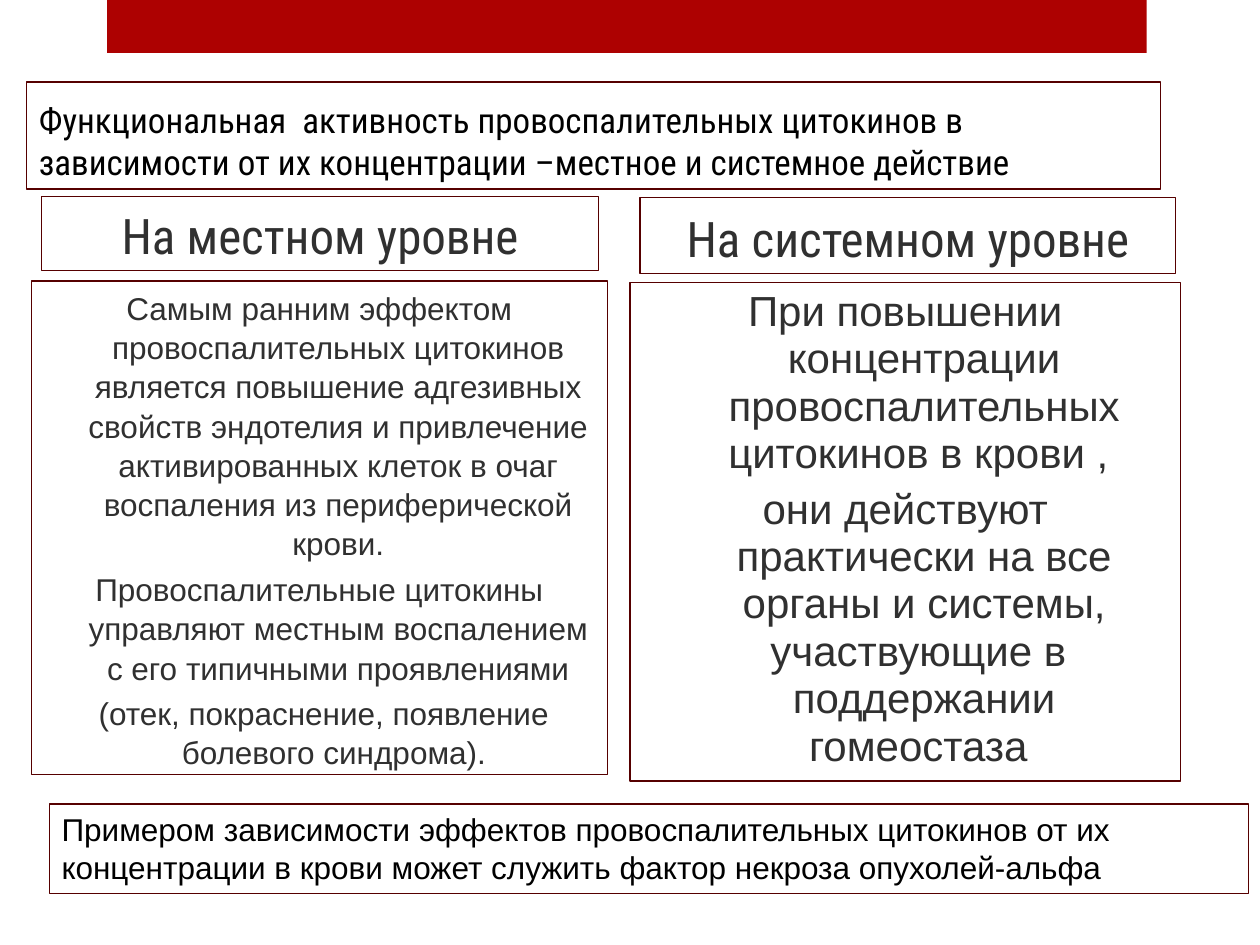
from pptx import Presentation
from pptx.dml.color import RGBColor
from pptx.enum.shapes import MSO_SHAPE
from pptx.enum.text import MSO_ANCHOR, PP_ALIGN
from pptx.util import Inches, Pt

COLORS = {"band": "AD0101", "border": "560000", "paper": "FFFFFF",
          "black": "000000", "gray": "303030"}
WIDTH, HEIGHT = 10, 7.5
HANGING = 0.3

# Text styles: font, size, color, alignment, anchor, hanging indent
STYLES = {
    "title": ("Roboto Condensed", 20, "black", PP_ALIGN.LEFT, MSO_ANCHOR.BOTTOM, False),
    "heading": ("Roboto Condensed", 28, "gray", PP_ALIGN.CENTER, MSO_ANCHOR.BOTTOM, False),
    "local": ("Arial", 18, "gray", PP_ALIGN.CENTER, MSO_ANCHOR.TOP, True),
    "systemic": ("Arial", 24, "gray", PP_ALIGN.CENTER, MSO_ANCHOR.TOP, True),
    "example": ("Arial", 18, "black", PP_ALIGN.LEFT, MSO_ANCHOR.TOP, False),
}
LINE_SPACING = {"local": 1.04, "systemic": 0.94}

# Content: style, (left, top, width, height) in inches, paragraphs
BOXES = [
    ("title", (0.21, 0.65, 9, 0.85), [
        "Функциональная  активность провоспалительных цитокинов в зависимости "
        "от их концентрации –местное и системное действие"]),
    ("heading", (0.33, 1.56, 4.42, 0.59), ["На местном уровне"]),
    ("local", (0.25, 2.23, 4.57, 3.92), [
        "Самым ранним эффектом провоспалительных цитокинов является повышение "
        "адгезивных свойств эндотелия и привлечение активированных клеток в очаг "
        "воспаления из периферической крови.",
        "Провоспалительные цитокины управляют местным воспалением с его "
        "типичными проявлениями",
        " (отек, покраснение, появление болевого синдрома). "]),
    ("heading", (5.08, 1.57, 4.25, 0.6), ["На системном уровне"]),
    ("systemic", (5, 2.24, 4.37, 3.96), [
        "При повышении концентрации провоспалительных цитокинов в крови , ",
        "они действуют практически на все органы и системы, участвующие в  "
        "поддержании гомеостаза "]),
    ("example", (0.39, 6.38, 9.52, 0.71), [
        "Примером зависимости эффектов провоспалительных цитокинов от их "
        "концентрации в крови может служить фактор некроза опухолей-альфа"]),
]


def color(name):
    return RGBColor.from_string(COLORS[name])


def add_box(page, place, fill, border=None):
    box = page.shapes.add_shape(MSO_SHAPE.RECTANGLE, *map(Inches, place))
    box.shadow.inherit = False
    box.fill.solid()
    box.fill.fore_color.rgb = color(fill)
    if border:
        box.line.color.rgb = color(border)
        box.line.width = Pt(0.75)
    else:
        box.line.fill.background()
    return box


def write(box, style, paragraphs):
    font, size, ink, align, anchor, hanging = STYLES[style]
    frame = box.text_frame
    frame.word_wrap = True
    frame.vertical_anchor = anchor
    for index, text in enumerate(paragraphs):
        para = frame.add_paragraph() if index else frame.paragraphs[0]
        para.alignment = align
        para.line_spacing = LINE_SPACING.get(style, 1.0)
        if align == PP_ALIGN.CENTER:
            para.space_before = Pt(round(size * 0.2, 1))
        if hanging:
            properties = para._p.get_or_add_pPr()
            properties.set("marL", str(Inches(HANGING)))
            properties.set("indent", str(-Inches(HANGING)))
        span = para.add_run()
        span.text = text
        span.font.name = font
        span.font.size = Pt(size)
        span.font.color.rgb = color(ink)


def main():
    deck = Presentation()
    deck.slide_width, deck.slide_height = Inches(WIDTH), Inches(HEIGHT)
    page = deck.slides.add_slide(deck.slide_layouts[6])

    # Top band
    add_box(page, (0.85, 0, 8.25, 0.42), "band")

    # Framed texts
    for style, place, paragraphs in BOXES:
        write(add_box(page, place, "paper", "border"), style, paragraphs)

    deck.save("out.pptx")


if __name__ == "__main__":
    main()
